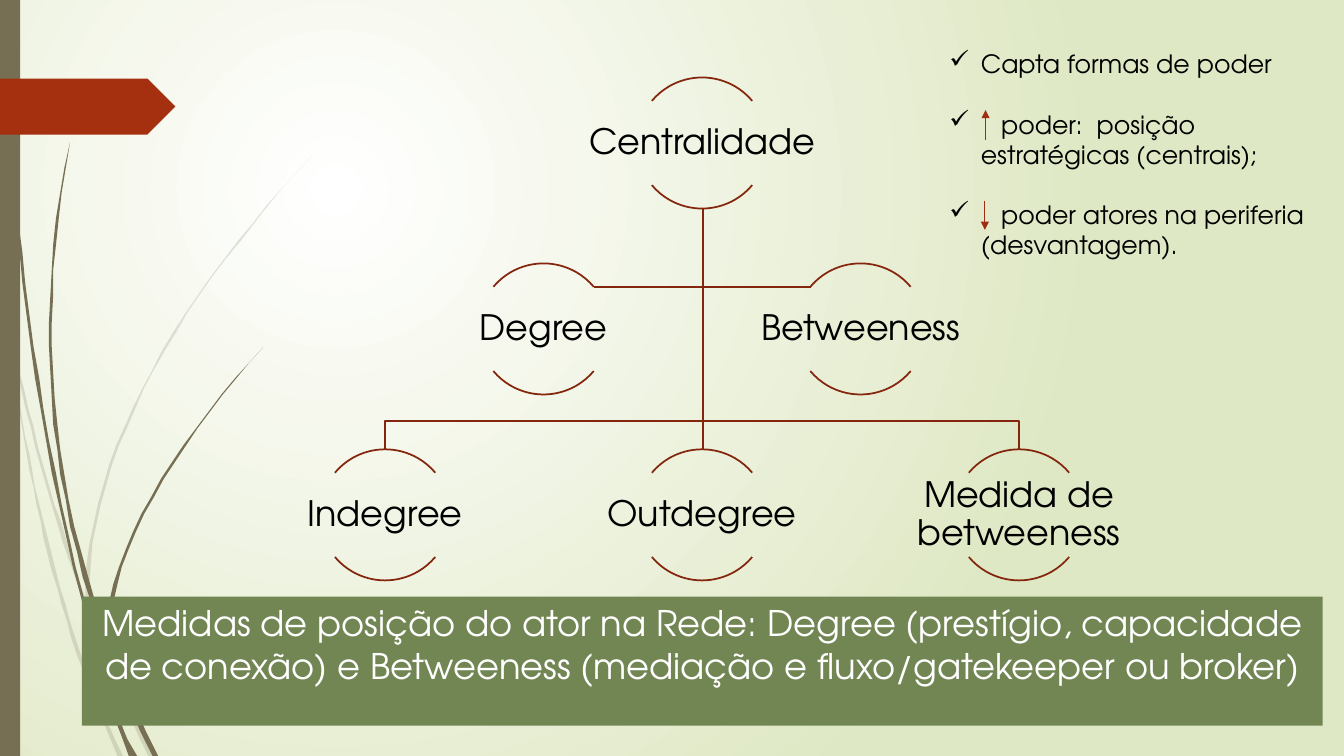
"""Builds the slide on centrality measures in networks."""
import math

from lxml import etree
from pptx import Presentation
from pptx import util as u
from pptx.dml.color import RGBColor
from pptx.enum import shapes, text
from pptx.oxml import ns

Pt = u.Pt
FONT = "TeX Gyre Adventor"
COLORS = {
    "white": "FFFFFF", "lime": "DFE8C4", "olive": "766F54", "rust": "A53010",
    "green": "728653", "line": "84260D", "arrow": "9E2E0F", "black": "000000",
}
WIDTH, HEIGHT = 960, 540

CENTER, COL_STEP = 501.5, 113.2
TOP, ROW_STEP = 55.4, 132.8
RADIUS = 46.8
ARC_END = math.radians(40)
UPPER_ARC, LOWER_ARC = (132, 192), (24, 84)
LABEL_HEIGHT = 59.8
LEAF_STEM = 19.7
NODES = [
    (0, 0, "Centralidade"), (-1, 1, "Degree"), (1, 1, "Betweeness"),
    (-2, 2, "Indegree"), (0, 2, "Outdegree"), (2, 2, "Medida de betweeness"),
]

LINE_HEIGHT, HANGING, ARROW_GAP = 21.6, 22.5, 37
NOTES = [
    "Capta formas de poder",
    "\tpoder:  posição estratégicas (centrais);",
    "\tpoder atores na periferia (desvantagem).",
]
SUMMARY = ("Medidas de posição do ator na Rede: Degree (prestígio, capacidade de conexão) "
           "e Betweeness (mediação e fluxo/gatekeeper ou broker)")

BLADE_STEPS = 24
PALE_BLADES = [
    {"tip": (0, 208), "bends": [(24, 319), (53, 430)], "root": (108, HEIGHT), "width": 3.6},
    {"tip": (8, 252), "bends": [(22, 348), (41, 444)], "root": (86, HEIGHT), "width": 3.2},
    {"tip": (224, 110), "bends": [(135, 205), (62, 318)], "root": (62, 430), "width": 2.4},
]
DARK_BLADES = [
    {"tip": (2, 0), "bends": [(9, 180), (30, 360)], "root": (93, HEIGHT), "width": 3},
    {"tip": (50, 101.5), "bends": [(20, 248), (38, 394)], "root": (111, HEIGHT), "width": 3.6},
    {"tip": (188, 248), "bends": [(108, 336), (40, 447)], "root": (96, HEIGHT), "width": 3},
]


def rgb(name):
    """Return the named colour."""
    return RGBColor.from_string(COLORS[name])


def sub(parent, tag, **attrs):
    """Append a drawing element with attributes."""
    return etree.SubElement(parent, ns.qn(tag), attrs)


def paint(sp, fill=None, line=None):
    """Set fill and line and drop the shadow."""
    sp.shadow.inherit = False
    if fill:
        sp.fill.solid()
        sp.fill.fore_color.rgb = rgb(fill)
    else:
        sp.fill.background()
    if line:
        sp.line.color.rgb = rgb(line)
        sp.line.width = Pt(1.25)
    else:
        sp.line.fill.background()


def add_background(s):
    """Fill the background with a circular gradient."""
    fill = s.background.fill
    fill.gradient()
    for stop, name in zip(fill.gradient_stops, ("white", "lime")):
        stop.color.rgb = rgb(name)
    grad = s.element.find(".//" + ns.qn("a:gradFill"))
    grad.remove(grad.find(ns.qn("a:lin")))
    circle = sub(grad, "a:path", path="circle")
    sub(circle, "a:fillToRect", l="50000", t="50000", r="100000", b="100000")


def add_outline(s, points, fill=None, line=None):
    """Draw a closed filled shape or an open line."""
    builder = s.shapes.build_freeform(*points[0], scale=Pt(1))
    builder.add_line_segments(points[1:], close=bool(fill))
    sp = builder.convert_to_shape()
    paint(sp, fill, line)
    return sp


def curve_point(controls, t):
    """Return the point at t on a Bezier curve."""
    n = len(controls) - 1
    weights = [math.comb(n, i) * t ** i * (1 - t) ** (n - i) for i in range(n + 1)]
    return tuple(sum(w * c[axis] for w, c in zip(weights, controls)) for axis in (0, 1))


def add_blade(s, tip, bends, root, width, alpha=100):
    """Draw a curved blade of grass that widens from tip to root."""
    left, right = [], []
    for i in range(BLADE_STEPS + 1):
        t = i / BLADE_STEPS
        x, y = curve_point([tip, *bends, root], t)
        half = width / 2 * math.sqrt(t)
        left.append((x - half, y))
        right.append((x + half, y))
    sp = add_outline(s, left + right[::-1], "olive")
    if alpha < 100:
        color = sp.element.spPr.find(".//" + ns.qn("a:srgbClr"))
        sub(color, "a:alpha", val=str(alpha * 1000))


def add_block(s, kind, box, fill=None, line=None):
    """Add a preset shape."""
    sp = s.shapes.add_shape(kind, *map(Pt, box))
    paint(sp, fill, line)
    return sp


def add_run(p, words, size, color):
    """Add a run of text."""
    r = p.add_run()
    r.text = words
    r.font.name = FONT
    r.font.size = Pt(size)
    r.font.color.rgb = rgb(color)


def node_top(col, row):
    """Return the top middle point of a node."""
    return CENTER + col * COL_STEP, TOP + row * ROW_STEP


def add_node(s, col, row, label):
    """Add a label between two arcs."""
    x, y = node_top(col, row)
    for start, end in (UPPER_ARC, LOWER_ARC):
        sp = add_block(s, shapes.MSO_SHAPE.ARC,
                       (x - RADIUS, y, 2 * RADIUS, 2 * RADIUS), line="line")
        sp.adjustments[0], sp.adjustments[1] = start, end
    box = (x - 2 * RADIUS, y + RADIUS - LABEL_HEIGHT / 2, 4 * RADIUS, LABEL_HEIGHT)
    tf = s.shapes.add_textbox(*map(Pt, box)).text_frame
    tf.word_wrap = True
    tf.vertical_anchor = text.MSO_ANCHOR.MIDDLE
    tf.margin_left = tf.margin_right = tf.margin_top = tf.margin_bottom = Pt(1.25)
    p = tf.paragraphs[0]
    p.alignment = text.PP_ALIGN.CENTER
    p.line_spacing = 0.9
    add_run(p, label, 25, "black")


def add_branches(s):
    """Link the root to the nodes below it."""
    start = (CENTER, TOP + 2 * RADIUS)
    for side in (-1, 1):
        x, y = node_top(side, 1)
        x -= side * RADIUS * math.cos(ARC_END)
        y += RADIUS * (1 - math.sin(ARC_END))
        add_outline(s, [start, (CENTER, y), (x, y)], line="line")
    for col in (-2, 0, 2):
        x, y = node_top(col, 2)
        turn = y - LEAF_STEM
        corners = [(CENTER, turn), (x, turn)] if col else []
        add_outline(s, [start, *corners, (x, y)], line="line")


def add_notes(s):
    """Add the check-marked list."""
    tf = s.shapes.add_textbox(Pt(671), Pt(31), Pt(289), Pt(160)).text_frame
    tf.word_wrap = True
    for i, note in enumerate(NOTES):
        p = tf.add_paragraph() if i else tf.paragraphs[0]
        p.space_before = Pt(LINE_HEIGHT if i else 0)
        pPr = p._p.get_or_add_pPr()
        pPr.set("marL", str(Pt(HANGING)))
        pPr.set("indent", str(-Pt(HANGING)))
        sub(pPr, "a:buChar", char="✓")
        sub(sub(pPr, "a:tabLst"), "a:tab", pos=str(Pt(ARROW_GAP)), algn="l")
        add_run(p, note, 18, "black")


def add_arrow(s, x, y1, y2):
    """Add a thin vertical arrow."""
    c = s.shapes.add_connector(shapes.MSO_CONNECTOR.STRAIGHT, Pt(x), Pt(y1), Pt(x), Pt(y2))
    c.line.color.rgb = rgb("arrow")
    c.line.width = Pt(0.75)
    sub(c.line._get_or_add_ln(), "a:tailEnd", type="triangle")
    sub(c.element.spPr, "a:effectLst")


def add_banner(s):
    """Add the summary banner."""
    tf = add_block(s, shapes.MSO_SHAPE.RECTANGLE, (58.5, 426.2, 886.3, 92.2), "green").text_frame
    tf.word_wrap = True
    tf.vertical_anchor = text.MSO_ANCHOR.TOP
    p = tf.paragraphs[0]
    p.alignment = text.PP_ALIGN.CENTER
    add_run(p, SUMMARY, 25.2, "white")


def main():
    """Build and save the slide."""
    prs = Presentation()
    prs.slide_width, prs.slide_height = Pt(WIDTH), Pt(HEIGHT)
    s = prs.slides.add_slide(prs.slide_layouts[6])
    add_background(s)
    for blades, alpha in ((PALE_BLADES, 20), (DARK_BLADES, 100)):
        for blade in blades:
            add_blade(s, **blade, alpha=alpha)
    add_block(s, shapes.MSO_SHAPE.RECTANGLE, (0, 0, 14.4, HEIGHT), "olive")
    add_block(s, shapes.MSO_SHAPE.PENTAGON, (0, 56.2, 125.3, 39.9), "rust")
    add_banner(s)
    add_branches(s)
    for node in NODES:
        add_node(s, *node)
    add_notes(s)
    add_arrow(s, 704, 100, 78.5)
    add_arrow(s, 703.5, 143.3, 164.2)
    prs.save("out.pptx")


if __name__ == "__main__":
    main()
